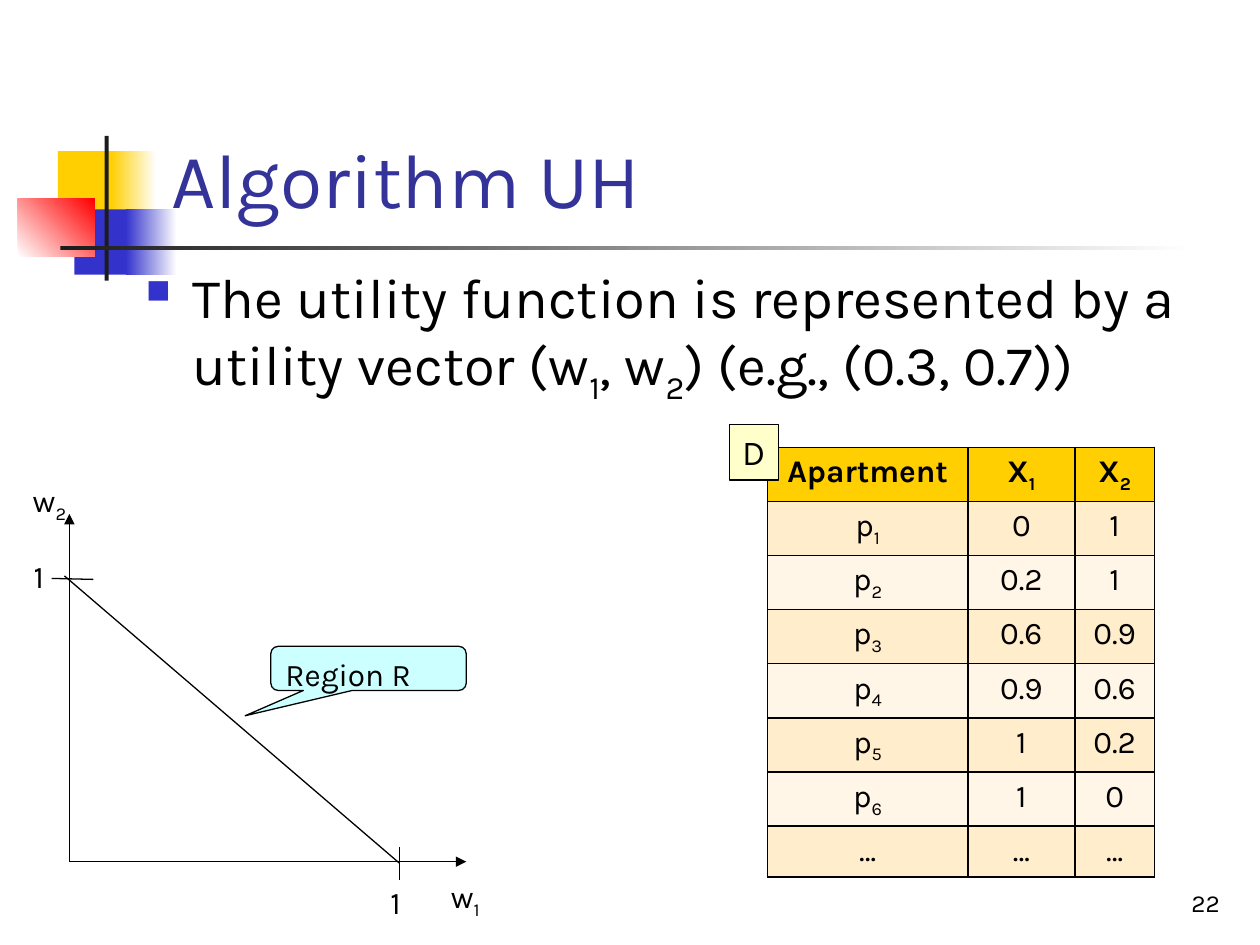
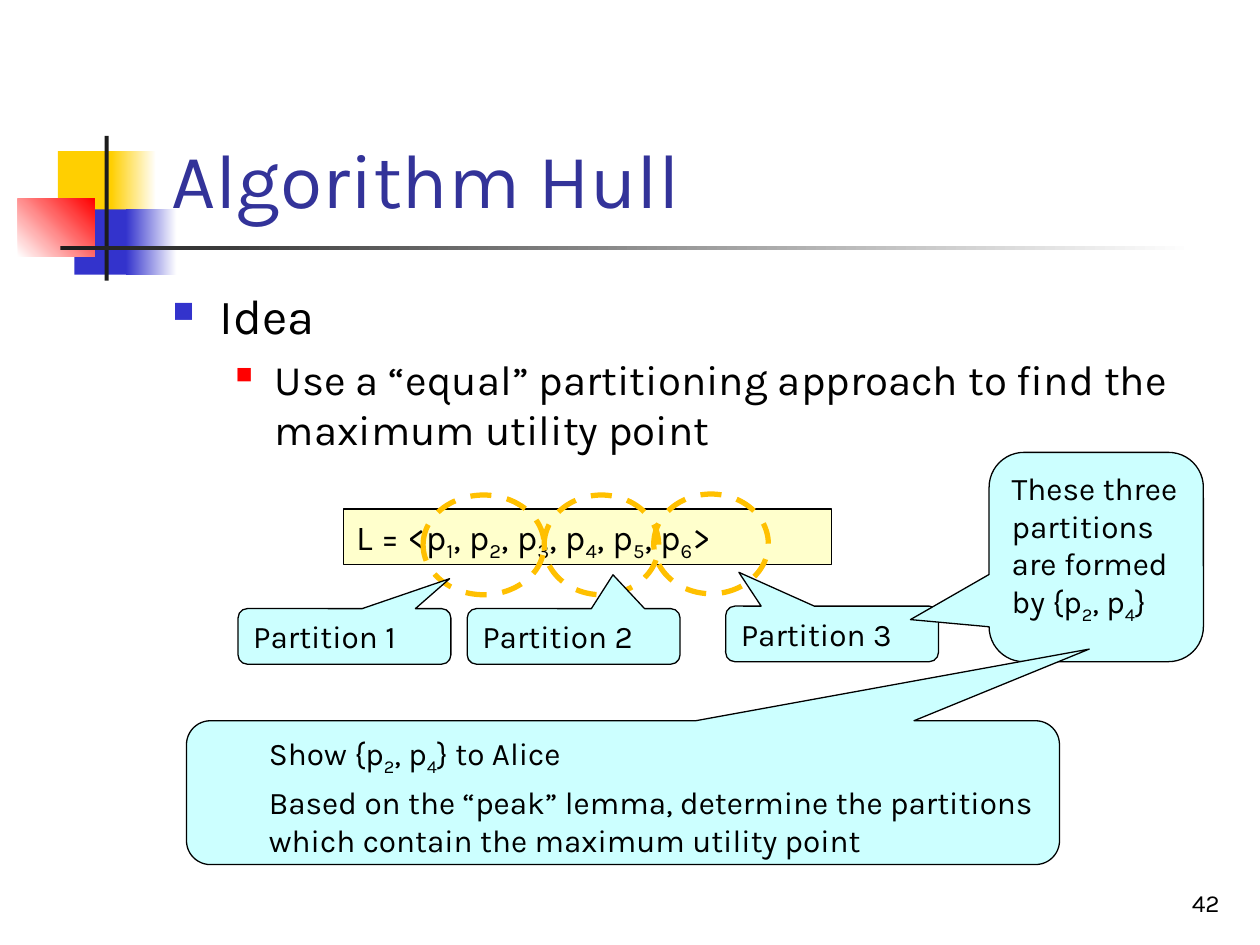
from dataclasses import dataclass
from typing import NamedTuple, Optional

from lxml.etree import SubElement
from pptx import Presentation
from pptx.dml.color import RGBColor
from pptx.enum.dml import MSO_LINE
from pptx.enum.shapes import MSO_CONNECTOR, MSO_SHAPE as Preset
from pptx.enum.text import MSO_ANCHOR as Anchor, MSO_AUTO_SIZE as Fit, PP_ALIGN as Align
from pptx.oxml.ns import qn
from pptx.util import Cm, Pt

FONT = "Karla"
BLACK = RGBColor(0x00, 0x00, 0x00)
WHITE = RGBColor(0xFF, 0xFF, 0xFF)
DARK = RGBColor(0x1C, 0x1C, 0x1C)
NAVY = RGBColor(0x33, 0x33, 0x99)
BLUE = RGBColor(0x33, 0x33, 0xCC)
RED = RGBColor(0xFF, 0x00, 0x00)
GOLD = RGBColor(0xFF, 0xCF, 0x01)
AMBER = RGBColor(0xFF, 0xC0, 0x00)
CREAM = RGBColor(0xFF, 0xFF, 0xCC)
AQUA = RGBColor(0xCC, 0xFF, 0xFF)
SAND = RGBColor(0xFF, 0xED, 0xCC)
PALE = RGBColor(0xFF, 0xF6, 0xE7)


class Box(NamedTuple):
    """Left, top, width and height in centimetres."""
    x: float
    y: float
    w: float
    h: float

    def emu(self) -> list:
        return [Cm(v) for v in self]


class Line(NamedTuple):
    x1: float
    y1: float
    x2: float
    y2: float
    arrow: bool = False


class Bullet(NamedTuple):
    color: RGBColor
    percent: int


@dataclass
class Para:
    """One paragraph; in its text "_" lowers the next character."""
    text: str
    size: float = 18
    color: RGBColor = BLACK
    bold: bool = False
    align: Align = Align.LEFT
    left: float = 0
    hang: float = 0
    gap: float = 0
    bullet: Optional[Bullet] = None


@dataclass
class Band:
    box: Box
    start: RGBColor
    end: Optional[RGBColor] = None
    angle: float = 0


@dataclass
class Callout:
    box: Box
    tip: tuple
    paras: list


BANDS = [
    Band(Box(1.17, 3.05, 1.22, 1.32), GOLD),
    Band(Box(2.24, 3.05, 0.91, 1.32), GOLD, WHITE),
    Band(Box(1.5, 4.22, 1.17, 1.32), BLUE),
    Band(Box(2.54, 4.22, 1.02, 1.32), BLUE, WHITE),
    Band(Box(0.36, 4.01, 1.55, 1.17), WHITE, RED, 45),
    Band(Box(2.11, 2.74, 0.08, 2.92), DARK),
    Band(Box(1.22, 4.95, 22.86, 0.09), DARK, WHITE),
]
TITLE = Box(3.2, 0.58, 21.64, 4.06)
NUMBER = Box(19.56, 17.35, 5.28, 1.27)
SQUARE = Bullet(BLUE, 60)
SMALL = Bullet(RED, 55)

ROWS = [
    ("Apartment", "X_1", "X_2"),
    ("p_1", "0", "1"),
    ("p_2", "0.2", "1"),
    ("p_3", "0.6", "0.9"),
    ("p_4", "0.9", "0.6"),
    ("p_5", "1", "0.2"),
    ("p_6", "1", "0"),
    ("…", "…", "…"),
]
COLS = (4.04, 2.16, 1.6)
ROW_H = 1.03

AXES = [
    Line(1.4, 17.37, 9.4, 17.37, True),
    Line(1.4, 17.37, 1.4, 10.36, True),
    Line(8.05, 17.07, 8.05, 17.73),
    Line(1.04, 11.66, 1.88, 11.68),
    Line(1.3, 11.61, 8.05, 17.4),
]
LABELS = [
    ("w_1", Box(8.84, 17.55, 1.22, 1.02)),
    ("w_2", Box(0.41, 9.58, 1.22, 1.02)),
    ("1", Box(0.43, 11.1, 0.86, 1.02)),
    ("1", Box(7.62, 17.68, 0.86, 1.02)),
]
REGION = Callout(Box(5.46, 13.03, 3.94, 0.89), (-0.631, 1.073), [Para("Region R")])

RINGS = [
    Box(8.53, 9.98, 2.44, 2.01),
    Box(10.97, 9.98, 2.31, 2.01),
    Box(13.18, 9.96, 2.31, 2.01),
]
PARTS = [
    Callout(Box(x, y, 4.29, 1.12), tip, [Para(f"Partition {i}")])
    for i, (x, y, tip) in enumerate([
        (4.8, 12.27, (0.494, -1.039)),
        (9.42, 12.27, (0.185, -1.109)),
        (14.63, 12.22, (-0.438, -1.109)),
    ], 1)
]
NOTES = [
    Callout(Box(19.94, 9.12, 4.32, 4.22), (-0.867, 0.299),
            [Para("These three partitions are formed by {p_2, p_4}")]),
    Callout(Box(3.76, 14.53, 17.6, 2.9), (0.534, -0.998), [
        Para(text, left=1.27, gap=3.6) for text in (
            "Show {p_2, p_4} to Alice",
            "Based on the “peak” lemma, determine the partitions "
            "which contain the maximum utility point",
        )
    ]),
]


def add_run(para, text: str, style: Para, low: bool = False) -> None:
    if not text:
        return
    run = para.add_run()
    run.text = text
    font = run.font
    font.name, font.size, font.bold = FONT, Pt(style.size), style.bold
    font.color.rgb = style.color
    if low:
        run._r.get_or_add_rPr().set("baseline", "-25000")


def add_bullet(props, bullet: Bullet) -> None:
    color = SubElement(props, qn("a:buClr"))
    SubElement(color, qn("a:srgbClr"), val=str(bullet.color))
    SubElement(props, qn("a:buSzPct"), val=str(bullet.percent * 1000))
    SubElement(props, qn("a:buChar"), char="■")


def write(frame, paras: list) -> None:
    for i, style in enumerate(paras):
        para = frame.add_paragraph() if i else frame.paragraphs[0]
        para.alignment = style.align
        para.space_before = Pt(style.gap)
        props = para._p.get_or_add_pPr()
        props.set("marL", str(Cm(style.left)))
        props.set("indent", str(-Cm(style.hang)))
        if style.bullet:
            add_bullet(props, style.bullet)
        first, *rest = style.text.split("_")
        add_run(para, first, style)
        for part in rest:
            add_run(para, part[0], style, low=True)
            add_run(para, part[1:], style)


def add_text(slide, box: Box, paras: list, anchor=Anchor.TOP, wrap: bool = True) -> None:
    frame = slide.shapes.add_textbox(*box.emu()).text_frame
    frame.word_wrap = wrap
    frame.auto_size = Fit.NONE if wrap else Fit.SHAPE_TO_FIT_TEXT
    frame.vertical_anchor = anchor
    write(frame, paras)


def add_shape(slide, kind, box: Box, fill: Optional[RGBColor] = None,
              line: Optional[RGBColor] = None, width: float = 0.75):
    shape = slide.shapes.add_shape(kind, *box.emu())
    shape.shadow.inherit = False
    if fill is None:
        shape.fill.background()
    else:
        shape.fill.solid()
        shape.fill.fore_color.rgb = fill
    if line is None:
        shape.line.fill.background()
    else:
        shape.line.color.rgb = line
        shape.line.width = Pt(width)
    shape.text_frame.vertical_anchor = Anchor.TOP
    return shape


def add_band(slide, band: Band) -> None:
    fill = add_shape(slide, Preset.RECTANGLE, band.box, band.start).fill
    if band.end is not None:
        fill.gradient()
        fill.gradient_angle = band.angle
        for stop, color in zip(fill.gradient_stops, (band.start, band.end)):
            stop.color.rgb = color


def add_tag(slide, box: Box, text: str, wrap: bool = True) -> None:
    frame = add_shape(slide, Preset.RECTANGLE, box, CREAM, BLACK).text_frame
    frame.word_wrap = wrap
    write(frame, [Para(text, 20)])


def add_callout(slide, note: Callout) -> None:
    shape = add_shape(slide, Preset.ROUNDED_RECTANGULAR_CALLOUT, note.box, AQUA, BLACK)
    shape.adjustments[0], shape.adjustments[1] = note.tip
    shape.text_frame.word_wrap = True
    write(shape.text_frame, note.paras)


def add_ring(slide, box: Box) -> None:
    add_shape(slide, Preset.OVAL, box, line=AMBER, width=3).line.dash_style = MSO_LINE.DASH


def add_line(slide, line: Line) -> None:
    ends = [Cm(v) for v in line[:4]]
    link = slide.shapes.add_connector(MSO_CONNECTOR.STRAIGHT, *ends)
    link.line.color.rgb = BLACK
    link.line.width = Pt(0.75)
    if line.arrow:
        SubElement(link.line._get_or_add_ln(), qn("a:tailEnd"), type="triangle")
    SubElement(link._element.spPr, qn("a:effectLst"))


def add_border(cell) -> None:
    props = cell._tc.get_or_add_tcPr()
    for side in "LRTB":
        edge = SubElement(props, qn(f"a:ln{side}"), w=str(Pt(1)))
        fill = SubElement(edge, qn("a:solidFill"))
        SubElement(fill, qn("a:srgbClr"), val=str(BLACK))


def add_grid(slide, x: float, y: float) -> None:
    box = Box(x, y, sum(COLS), ROW_H * len(ROWS))
    table = slide.shapes.add_table(len(ROWS), len(COLS), *box.emu()).table
    table.first_row = table.horz_banding = False
    for col, width in zip(table.columns, COLS):
        col.width = Cm(width)
    for r, row in enumerate(ROWS):
        table.rows[r].height = Cm(ROW_H)
        for c, text in enumerate(row):
            cell = table.cell(r, c)
            add_border(cell)
            cell.fill.solid()
            cell.fill.fore_color.rgb = GOLD if r == 0 else SAND if r % 2 else PALE
            write(cell.text_frame, [Para(text, bold=r == 0, align=Align.CENTER)])


def add_slide(deck, title: str, number: str):
    """Add a blank slide with the shared bands, title and number."""
    slide = deck.slides.add_slide(deck.slide_layouts[6])
    for band in BANDS:
        add_band(slide, band)
    add_text(slide, TITLE, [Para(title, 44, NAVY)], Anchor.BOTTOM)
    add_text(slide, NUMBER, [Para(number, 14, align=Align.RIGHT)], Anchor.BOTTOM)
    return slide


def draw_utility(deck) -> None:
    slide = add_slide(deck, "Algorithm UH", "22")
    text = "The utility function is represented by a utility vector (w_1, w_2) (e.g., (0.3, 0.7))"
    add_text(slide, Box(2.69, 5.16, 21.59, 2.24),
             [Para(text, 32, left=0.95, hang=0.95, gap=6.4, bullet=SQUARE)])
    add_grid(slide, 15.47, 9.02)
    add_tag(slide, Box(14.71, 8.56, 0.99, 1.12), "D", wrap=False)
    for line in AXES:
        add_line(slide, line)
    for label, box in LABELS:
        add_text(slide, box, [Para(label)], wrap=False)
    add_callout(slide, REGION)


def draw_hull(deck) -> None:
    slide = add_slide(deck, "Algorithm Hull", "42")
    add_text(slide, Box(3.23, 5.64, 21.62, 11.48), [
        Para("Idea", 28, left=0.95, hang=0.95, gap=5.6, bullet=SQUARE),
        Para("Use a “equal” partitioning approach to find the maximum utility point",
             24, left=2.06, hang=0.79, gap=4.8, bullet=SMALL),
    ])
    add_tag(slide, Box(6.93, 10.26, 9.83, 1.12), "L = <p_1, p_2, p_3, p_4, p_5, p_6>")
    *under, top = RINGS
    for ring in under:
        add_ring(slide, ring)
    *notes, last = PARTS + NOTES
    for note in notes:
        add_callout(slide, note)
    add_ring(slide, top)
    add_callout(slide, last)


def main() -> None:
    deck = Presentation()
    deck.slide_width, deck.slide_height = Cm(25.4), Cm(19.05)
    draw_utility(deck)
    draw_hull(deck)
    deck.save("out.pptx")


if __name__ == "__main__":
    main()
